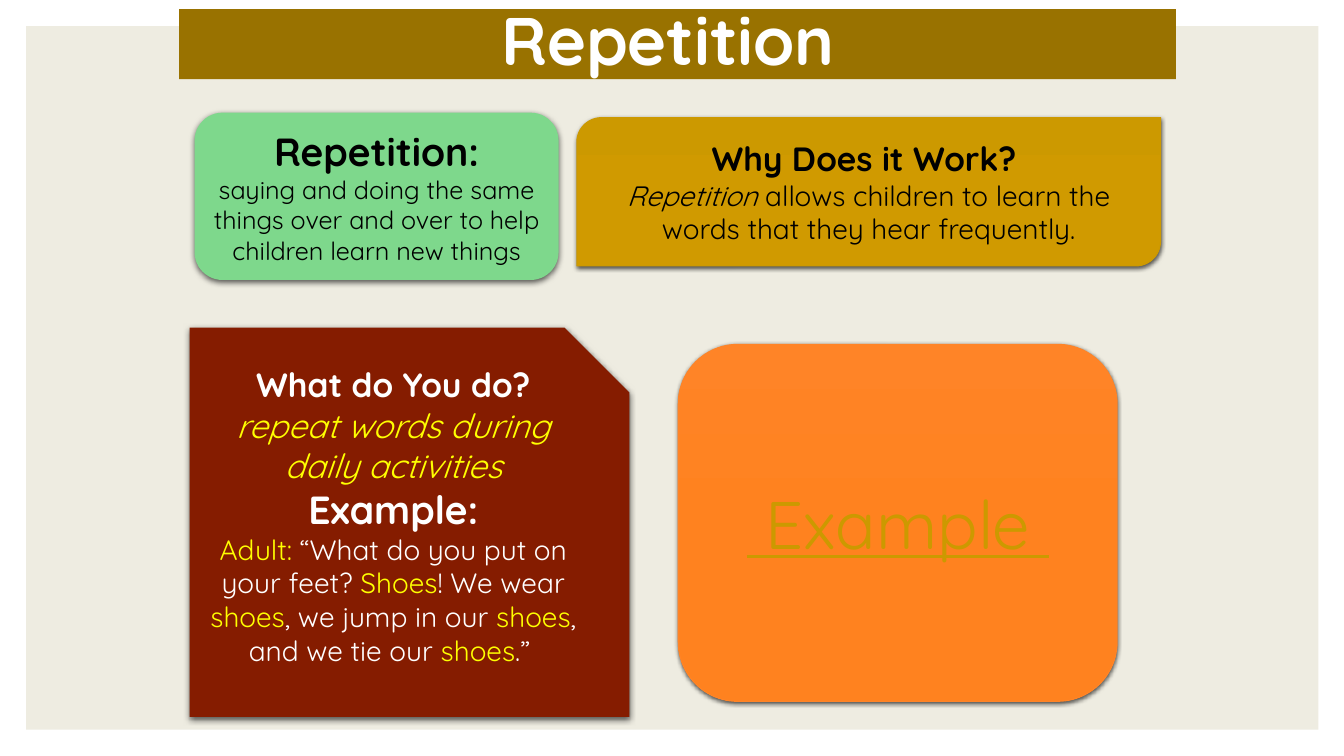
from copy import deepcopy

from lxml.etree import SubElement
from pptx import Presentation
from pptx.dml.color import RGBColor
from pptx.enum.shapes import MSO_SHAPE
from pptx.enum.text import MSO_ANCHOR, MSO_AUTO_SIZE, PP_ALIGN
from pptx.oxml.ns import qn
from pptx.util import Pt

BLACK, WHITE, YELLOW, GOLD = "000000", "FFFFFF", "FFFF00", "CC9900"


def colour(hex_code):
    return RGBColor.from_string(hex_code)


class Board:
    """The current slide and its house style."""

    font = "Quicksand"

    def __init__(self, slide):
        self.slide = slide

    def title(self, text, box, fill, size):
        heading = self.slide.shapes.title
        heading.left, heading.top, heading.width, heading.height = map(Pt, box)
        heading.fill.solid()
        heading.fill.fore_color.rgb = colour(fill)
        heading.text_frame.auto_size = MSO_AUTO_SIZE.NONE
        self.add_lines(heading, [self.line(text, size, WHITE, bold=True)])
        heading.text_frame.paragraphs[0].line_spacing = 0.9
        return heading

    def panel(self, kind, box, fill):
        shape = self.slide.shapes.add_shape(kind, *map(Pt, box))
        shape.shadow.inherit = False
        shape.line.fill.background()
        shape.fill.solid()
        shape.fill.fore_color.rgb = colour(fill)
        return shape

    def card(self, kind, box, fills, lines):
        """One fill gives a flat card; three give an outlined gradient card."""
        shape = self.panel(kind, box, fills[0])
        if len(fills) > 1:
            self.gradient(shape, fills)
            shape.line.color.rgb = colour(fills[0])
            shape.line.width = Pt(0.75)
            self.cast_shadow(shape, blur=3, distance=1)
        else:
            self.cast_shadow(shape, blur=4.5, distance=1.5)
        self.add_lines(shape, lines)
        return shape

    def gradient(self, shape, fills):
        shape.fill.gradient()
        shape.fill.gradient_angle = 270
        stops = shape.element.spPr.find(".//" + qn("a:gsLst"))
        stops.insert(1, deepcopy(stops[0]))
        for i, (stop, fill) in enumerate(zip(shape.fill.gradient_stops, fills)):
            stop.position = i / (len(fills) - 1)
            stop.color.rgb = colour(fill)

    def cast_shadow(self, shape, blur, distance):
        effects = shape.element.spPr.find(qn("a:effectLst"))
        outer = SubElement(effects, qn("a:outerShdw"), blurRad=str(Pt(blur)),
                           dist=str(Pt(distance)), dir="5400000", rotWithShape="0")
        tint = SubElement(outer, qn("a:srgbClr"), val=BLACK)
        SubElement(tint, qn("a:alpha"), val="63000")

    def line(self, text, size, ink, **style):
        return size, [(text, ink)], style

    def add_lines(self, shape, lines):
        frame = shape.text_frame
        frame.word_wrap = True
        frame.vertical_anchor = MSO_ANCHOR.MIDDLE
        for i, (size, pieces, style) in enumerate(lines):
            paragraph = frame.add_paragraph() if i else frame.paragraphs[0]
            paragraph.alignment = PP_ALIGN.CENTER
            paragraph.font.name = self.font
            paragraph.font.size = Pt(size)
            paragraph.font.bold = style.get("bold", False)
            paragraph.font.italic = style.get("italic", False)
            paragraph.font.underline = style.get("underline", False)
            if len(pieces) == 1:
                paragraph.font.color.rgb = colour(pieces[0][1])
            for text, ink, *slant in pieces:
                run = paragraph.add_run()
                run.text = text
                if len(pieces) > 1:
                    run.font.color.rgb = colour(ink)
                if slant:
                    run.font.italic = True


def main():
    deck = Presentation()
    deck.slide_width, deck.slide_height = Pt(960), Pt(540)
    board = Board(deck.slides.add_slide(deck.slide_layouts[5]))

    # Backdrop and title
    backdrop = board.panel(MSO_SHAPE.RECTANGLE, (18.75, 18.75, 923, 502.5), "EEECE1")
    heading = board.title("Repetition ", (128, 6.5, 712, 50), "997200", 48)
    heading.element.addprevious(backdrop.element)

    # Definition
    board.card(MSO_SHAPE.ROUNDED_RECTANGLE, (139, 80.5, 260, 119.5), ["7ED88C"], [
        board.line("Repetition:", 28, BLACK, bold=True),
        board.line("saying and doing the same things over and over to help "
                   "children learn new things", 18, BLACK),
    ])

    # Reason
    board.card(MSO_SHAPE.ROUND_2_DIAG_RECTANGLE, (412, 84, 417, 106),
               [GOLD, "D09A00", "CF9900"], [
        board.line("Why Does it Work? ", 24, BLACK, bold=True),
        (20, [("Repetition ", BLACK, "italic"),
              ("allows children to learn the words that they hear frequently.",
               BLACK)], {}),
    ])

    # Practice
    speech = [("Adult: ", YELLOW), ("“What do you put on your feet? ", WHITE),
              ("Shoes", YELLOW), ("! We wear ", WHITE),
              ("shoes", YELLOW), (", we jump in our ", WHITE),
              ("shoes", YELLOW), (", and we tie our ", WHITE),
              ("shoes", YELLOW), (".” ", WHITE)]
    practice = board.card(MSO_SHAPE.SNIP_1_RECTANGLE, (135.5, 234, 314, 278),
                          ["851C00"], [
        board.line("What do You do?", 24, WHITE, bold=True),
        board.line("repeat words during daily activities", 24, YELLOW, italic=True),
        board.line("Example:", 28, WHITE, bold=True),
        (20, speech, {}),
    ])
    practice.text_frame.vertical_anchor = MSO_ANCHOR.TOP
    practice.text_frame.margin_top = Pt(3)

    # Example
    board.card(MSO_SHAPE.ROUNDED_RECTANGLE, (484.5, 246, 313.5, 255),
               ["FF8427", "FF821F", "FF811F"],
               [board.line(" Example ", 48, GOLD, underline=True)])

    deck.save("out.pptx")


if __name__ == "__main__":
    main()
